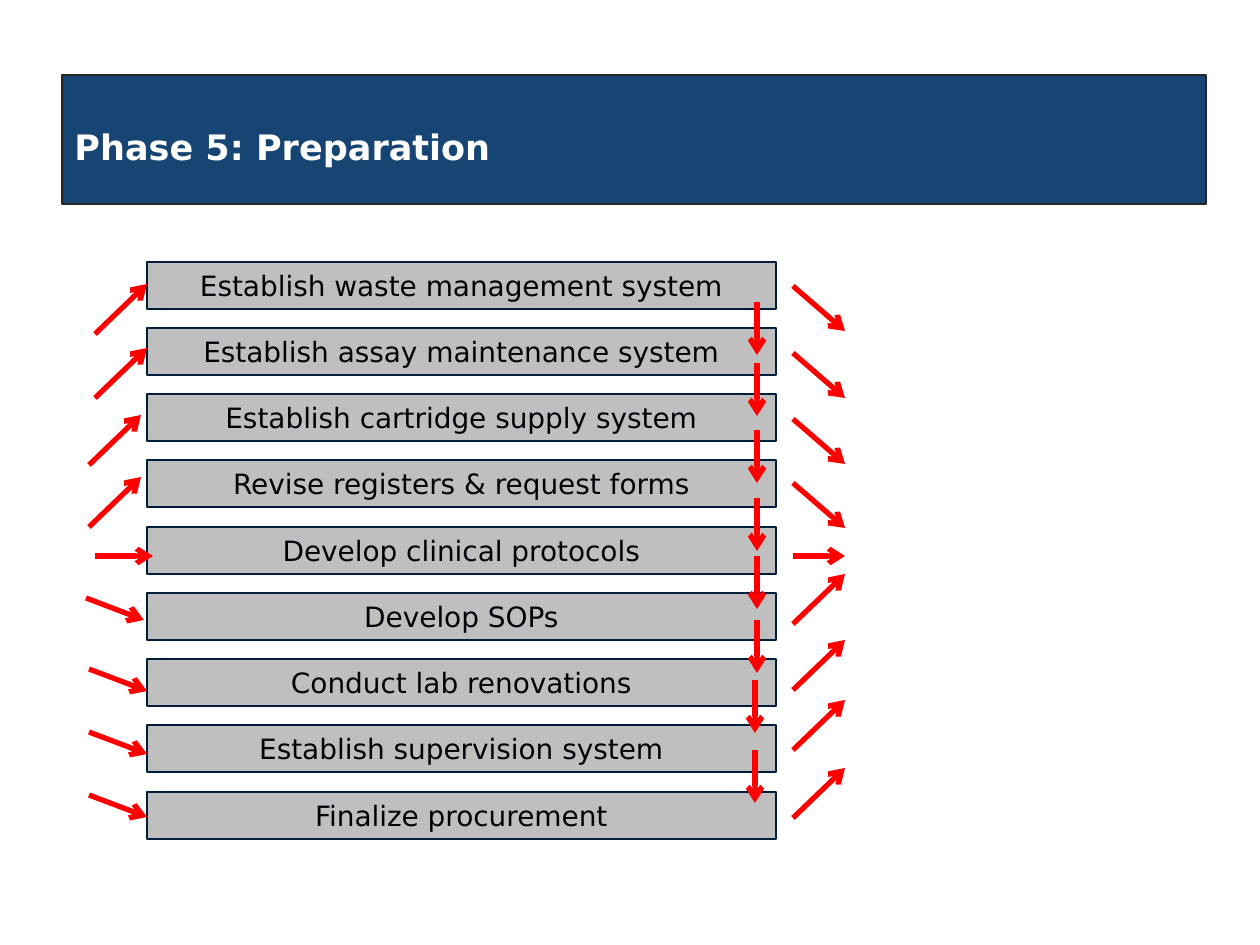
"""Build the "Phase 5: Preparation" slide with its stack of parallel tasks."""
from lxml.etree import SubElement
from pptx import Presentation
from pptx.dml.color import RGBColor
from pptx.enum.shapes import MSO_CONNECTOR, MSO_SHAPE
from pptx.enum.text import MSO_ANCHOR, PP_ALIGN
from pptx.oxml.ns import qn
from pptx.util import Emu, Pt

COLORS = {"banner": "003366", "banner_edge": "272727", "title": "FFFFFF",
          "task": "BFBFBF", "task_edge": "001D3B", "task_text": "000408",
          "arrow": "FF0000"}
TITLE_FONT = {"name": "DejaVu Sans", "size": Pt(20), "bold": True}
TASK_FONT = {"name": "DejaVu Sans", "size": Pt(16), "bold": False}
TASKS = ["Establish waste management system", "Establish assay maintenance system",
         "Establish cartridge supply system", "Revise registers & request forms",
         "Develop clinical protocols", "Develop SOPs", "Conduct lab renovations",
         "Establish supervision system", "Finalize procurement"]
TASK_TOP, TASK_SPAN = 262, 530


def px(*lengths):
    return [Emu(n * 914400 // 126) for n in lengths]


def write(shape, text, font_values, color, align):
    frame = shape.text_frame
    frame.word_wrap = True
    frame.vertical_anchor = MSO_ANCHOR.MIDDLE
    line = frame.paragraphs[0]
    line.alignment = align
    run = line.add_run()
    run.text = text
    for key, value in font_values.items():
        setattr(run.font, key, value)
    run.font.color.rgb = RGBColor.from_string(COLORS[color])


deck = Presentation()
deck.slide_width, deck.slide_height = px(1260, 945)
slide = deck.slides.add_slide(deck.slide_layouts[6])

panels = [("task", 147, TASK_TOP + TASK_SPAN * i // (len(TASKS) - 1), 629, 47, task)
          for i, task in enumerate(TASKS)]
panels.append(("banner", 62, 75, 1144, 129, None))

steps = [(757, y, 0, 53) for y in (302, 363, 430, 498, 556, 620)]
steps += [(755, y, 0, 53) for y in (680, 750)]
outputs = [(793, y, 52, 45) for y in (286, 353, 419, 483)]
outputs += [(793, y, 52, -50) for y in (624, 690, 750, 818)]
outputs.append((793, 556, 52, 0))
inputs = [(x, y, 52, -50) for x, y in ((95, 334), (95, 398), (89, 465), (89, 527))]
inputs += [(x, y, 58, 22) for x, y in ((86, 598), (89, 669), (89, 732), (89, 795))]
inputs.append((95, 556, 58, 0))

for role, left, top, width, height, label in panels:
    panel = slide.shapes.add_shape(MSO_SHAPE.RECTANGLE, *px(left, top, width, height))
    panel.shadow.inherit = False
    panel.fill.solid()
    panel.fill.fore_color.rgb = RGBColor.from_string(COLORS[role])
    panel.line.color.rgb = RGBColor.from_string(COLORS[role + "_edge"])
    panel.line.width = Pt(0.75)
    if label:
        write(panel, label, TASK_FONT, "task_text", PP_ALIGN.CENTER)
    else:
        tint = panel.fill._xPr.find(qn("a:solidFill"))[0]
        SubElement(tint, qn("a:alpha"), val="91000")

for x, y, across, down in steps + outputs + inputs:
    arrow = slide.shapes.add_connector(MSO_CONNECTOR.STRAIGHT,
                                       *px(x, y, x + across, y + down))
    arrow.line.color.rgb = RGBColor.from_string(COLORS["arrow"])
    arrow.line.width = Pt(3)
    SubElement(arrow.line._get_or_add_ln(), qn("a:tailEnd"), type="arrow")
    SubElement(arrow._element.spPr, qn("a:effectLst"))

title = slide.shapes.add_textbox(*px(62, 119, 1138, 54))
write(title, "Phase 5: Preparation", TITLE_FONT, "title", PP_ALIGN.LEFT)

deck.save("out.pptx")
